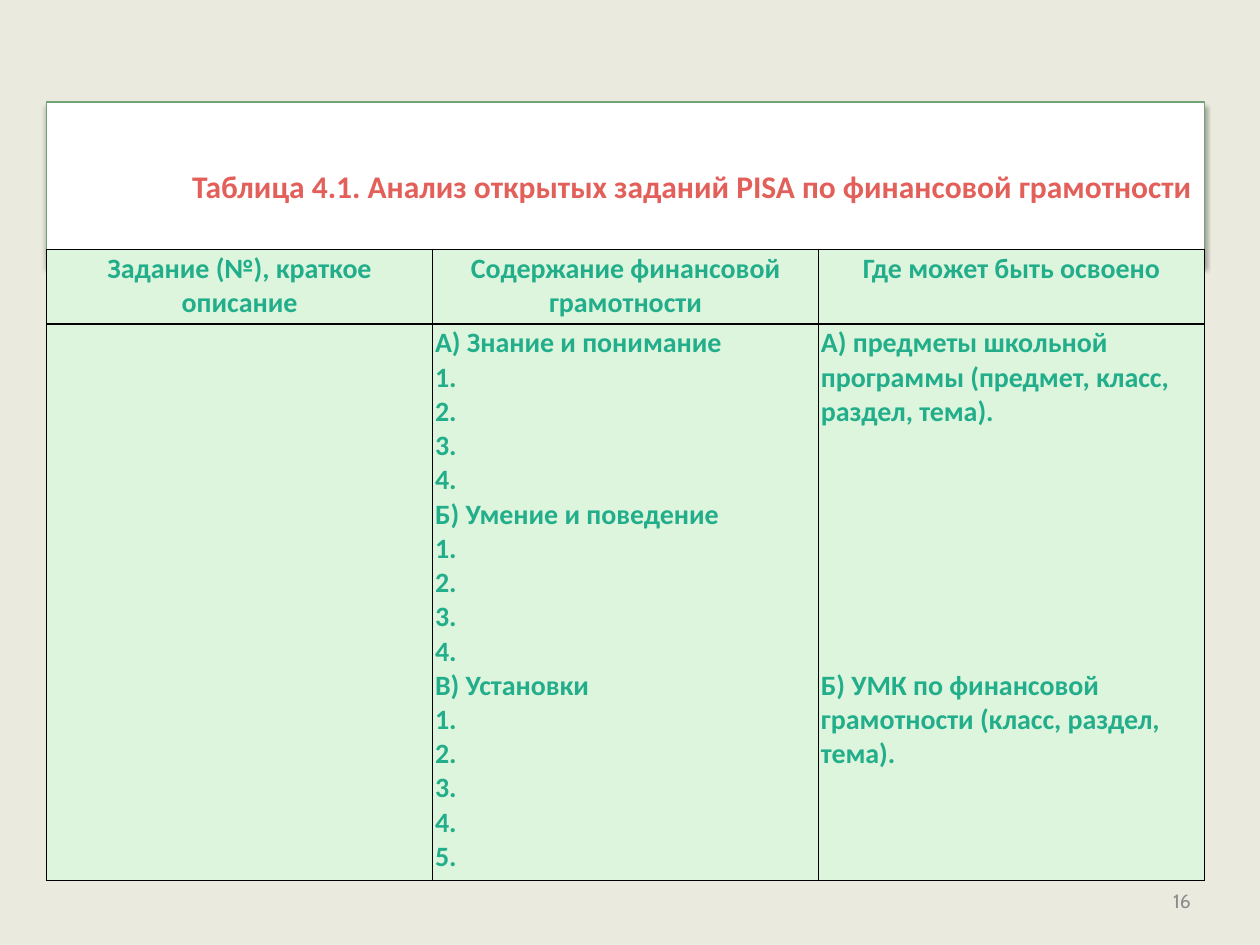
import pptx
import pptx.dml.color
import pptx.enum.shapes
import pptx.enum.text
import pptx.oxml
import pptx.oxml.ns
import pptx.util
from pptx.util import Inches

ALIGN = pptx.enum.text.PP_ALIGN
ANCHOR = pptx.enum.text.MSO_ANCHOR


def color(value):
    """Turn a hex string into an RGB colour."""
    return pptx.dml.color.RGBColor.from_string(value)


class SlideBuilder:
    """Holds the style and the current slide."""

    font = "Calibri"
    accent = "E25F5A"
    table_text = "23AE8B"
    table_fill = "DDF5DD"
    border = "000000"

    def __init__(self, deck, background):
        self.slide = deck.slides.add_slide(deck.slide_layouts[6])
        self.slide.background.fill.solid()
        self.slide.background.fill.fore_color.rgb = color(background)

    def set_text(self, paragraph, text, size, ink, align, bold=True, font=None):
        """Fill one paragraph with styled text."""
        paragraph.text = text
        paragraph.alignment = align
        paragraph.font.name = font or self.font
        paragraph.font.size = pptx.util.Pt(size)
        paragraph.font.bold = bold
        paragraph.font.color.rgb = color(ink)

    def page_number(self, text, left, top, width, height):
        """Add the right-aligned slide number."""
        frame = self.slide.shapes.add_textbox(left, top, width, height).text_frame
        frame.word_wrap = True
        frame.vertical_anchor = ANCHOR.MIDDLE
        self.set_text(frame.paragraphs[0], text, 11, "8C8C8C", ALIGN.RIGHT, False, "Cabin")

    def title_panel(self, text, left, top, width, height):
        """Add the white title panel with its soft shadow."""
        panel = self.slide.shapes.add_shape(
            pptx.enum.shapes.MSO_SHAPE.RECTANGLE, left, top, width, height)
        panel.fill.solid()
        panel.fill.fore_color.rgb = color("FFFFFF")
        panel.line.color.rgb = color("72A376")
        panel.line.width = pptx.util.Pt(0.75)
        panel.shadow.inherit = False
        effects = panel._element.spPr.find(pptx.oxml.ns.qn("a:effectLst"))
        effects.append(pptx.oxml.parse_xml(
            f'<a:outerShdw {pptx.oxml.ns.nsdecls("a")} blurRad="{pptx.util.Pt(3.1)}" '
            f'dist="{pptx.util.Pt(1.8)}" dir="5400000" rotWithShape="0">'
            '<a:srgbClr val="000000"><a:alpha val="35000"/></a:srgbClr></a:outerShdw>'))
        frame = panel.text_frame
        frame.word_wrap = True
        frame.vertical_anchor = ANCHOR.MIDDLE
        self.set_text(frame.paragraphs[0], text, 18, self.accent, ALIGN.RIGHT)
        frame.paragraphs[0].line_spacing = 1.15

    def cell(self, cell, lines, align):
        """Style one table cell and fill it with paragraphs."""
        cell.margin_left = cell.margin_right = Inches(0.02)
        cell.margin_top = cell.margin_bottom = Inches(0.02)
        properties = cell._tc.get_or_add_tcPr()
        for side in "LRTB":
            properties.append(pptx.oxml.parse_xml(
                f'<a:ln{side} {pptx.oxml.ns.nsdecls("a")} w="{pptx.util.Pt(1)}">'
                f'<a:solidFill><a:srgbClr val="{self.border}"/></a:solidFill></a:ln{side}>'))
        cell.fill.solid()
        cell.fill.fore_color.rgb = color(self.table_fill)
        frame = cell.text_frame
        for index, line in enumerate(lines):
            paragraph = frame.add_paragraph() if index else frame.paragraphs[0]
            self.set_text(paragraph, line, 16, self.table_text, align)

    def table(self, rows, left, top, width, heights):
        """Add a table with equal columns and a centred header row."""
        columns = len(rows[0])
        table = self.slide.shapes.add_table(
            len(rows), columns, left, top, width, sum(heights)).table
        for column in table.columns:
            column.width = width // columns
        for r, row in enumerate(rows):
            table.rows[r].height = heights[r]
            for c, lines in enumerate(row):
                self.cell(table.cell(r, c), lines, ALIGN.LEFT if r else ALIGN.CENTER)
        return table


def numbered(heading, count):
    """Return a heading followed by empty numbered entries."""
    return [heading] + [f"{number}." for number in range(1, count + 1)]


def main():
    """Build the slide and save it."""
    deck = pptx.Presentation()
    deck.slide_width, deck.slide_height = Inches(10), Inches(7.5)
    builder = SlideBuilder(deck, "EAEBDE")
    left, width = Inches(0.37), Inches(9.19)

    builder.page_number("16", Inches(7.22), Inches(6.95), Inches(2.33), Inches(0.4))
    builder.title_panel(
        "Таблица 4.1. Анализ открытых заданий PISA по финансовой грамотности",
        left, Inches(0.81), width, Inches(1.29))

    header = [["Задание (№), краткое описание"],
              ["Содержание финансовой грамотности"],
              ["Где может быть освоено"]]
    content = (numbered("А) Знание и понимание", 4)
               + numbered("Б) Умение и поведение", 4)
               + numbered("В) Установки", 5))
    sources = ["А) предметы школьной программы (предмет, класс, раздел, тема).",
               "Б) УМК по финансовой грамотности (класс, раздел, тема)."]
    analysis = builder.table([header, [[], content, sources]], left, Inches(1.98),
                             width, [Inches(0.59), Inches(4.42)])
    textbooks = analysis.cell(1, 2).text_frame.paragraphs[1]
    textbooks.space_before = pptx.util.Pt(137)

    deck.save("out.pptx")


if __name__ == "__main__":
    main()
